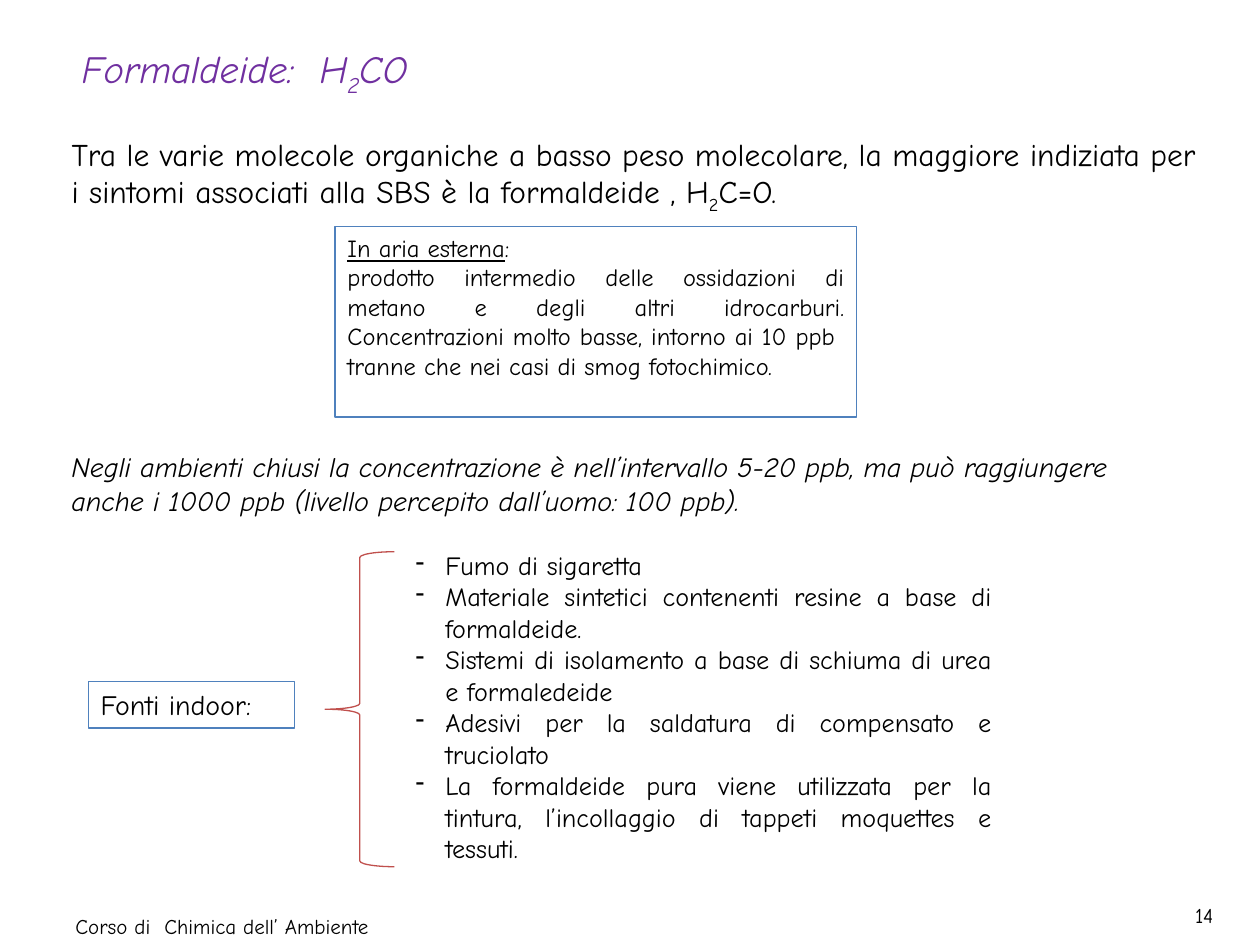
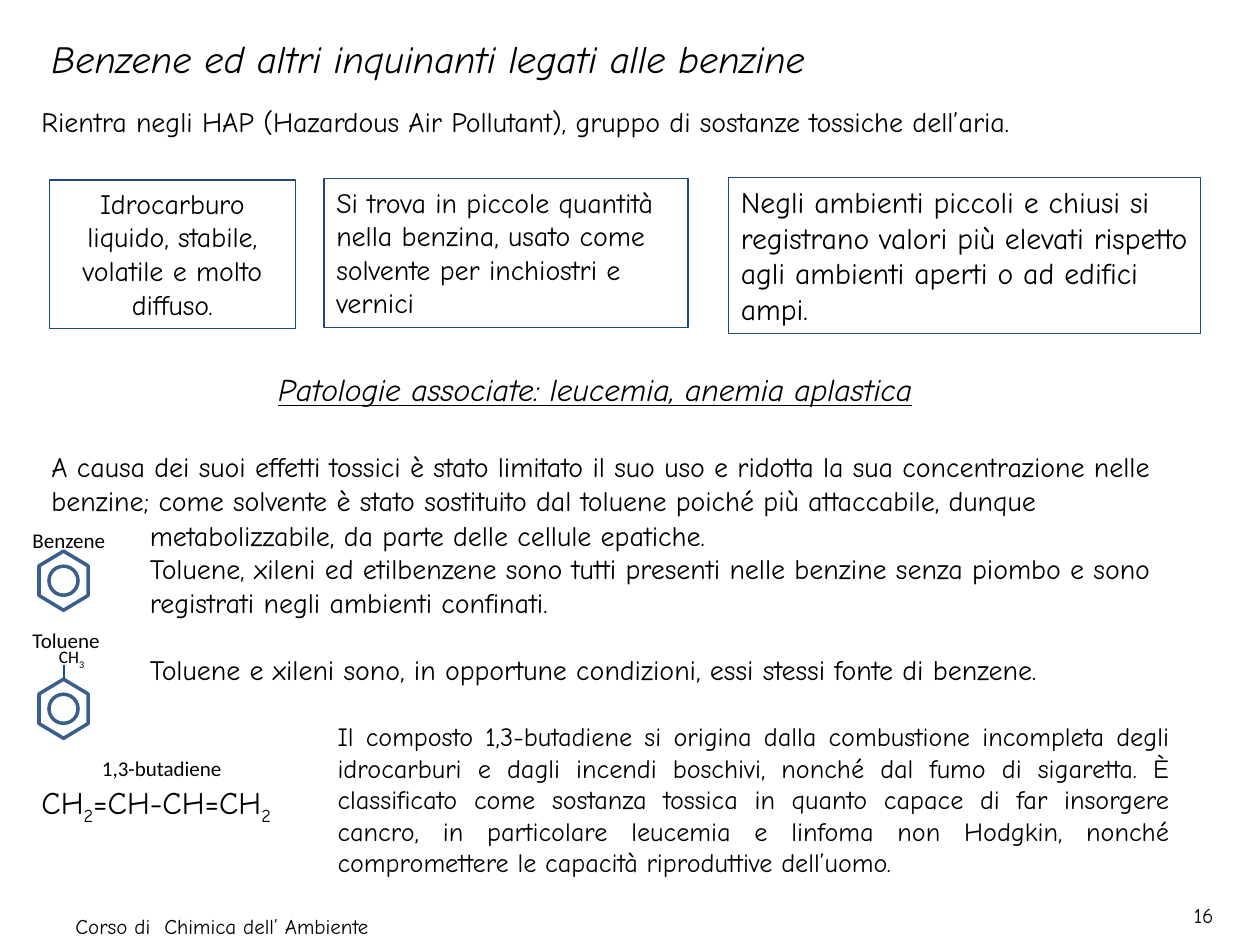
from dataclasses import dataclass

from lxml.etree import SubElement
from pptx import Presentation
from pptx.dml.color import RGBColor
from pptx.enum.shapes import MSO_CONNECTOR as Connector, MSO_SHAPE as Preset
from pptx.enum.text import PP_ALIGN as Align
from pptx.oxml.ns import qn
from pptx.util import Pt

BLACK = RGBColor(0x00, 0x00, 0x00)
PURPLE = RGBColor(0x70, 0x30, 0xA0)
BLUE = RGBColor(0x4F, 0x81, 0xBD)
NAVY = RGBColor(0x1F, 0x49, 0x7D)
RING_BLUE = RGBColor(0x3A, 0x5F, 0x8C)
RED = RGBColor(0xC0, 0x50, 0x4D)
BODY_FONT = "Comic Neue"
LABEL_FONT = "Calibri"
THIN = 0.75
INDENT = 17


@dataclass
class Box:
    left: float
    top: float
    width: float
    height: float

    def inner(self, left, top, width, height):
        return Box(self.left + left, self.top + top, width, height)

    def points(self):
        return Pt(self.left), Pt(self.top), Pt(self.width), Pt(self.height)


PAGE = Box(0, 0, 720, 540)


def add_spans(para, text):
    for index, piece in enumerate(text.split("_")):
        if piece:
            span = para.add_run()
            span.text = piece
            if index % 2:
                span.font._element.set("baseline", "-25000")


def add_text(page, box, texts, size, font=BODY_FONT, color=BLACK, italic=False,
             underline=False, align=Align.LEFT, border=None):
    shape = page.shapes.add_textbox(*box.points())
    if border is not None:
        shape.line.color.rgb = border
        shape.line.width = Pt(THIN)
    frame = shape.text_frame
    frame.word_wrap = True
    for index, text in enumerate([texts] if isinstance(texts, str) else texts):
        para = frame.add_paragraph() if index else frame.paragraphs[0]
        para.alignment = align
        para.font.name = font
        para.font.size = Pt(size)
        para.font.color.rgb = color
        para.font.italic = italic
        para.font.underline = underline
        add_spans(para, text)
    return frame.paragraphs


def add_outline(page, preset, box, color, width):
    shape = page.shapes.add_shape(preset, *box.points())
    shape.shadow.inherit = False
    shape.fill.background()
    shape.line.color.rgb = color
    shape.line.width = Pt(width)
    return shape


def add_dash(para):
    props = para._p.get_or_add_pPr()
    props.set("marL", str(Pt(INDENT)))
    props.set("indent", str(-Pt(INDENT)))
    dash = props.makeelement(qn("a:buChar"), {"char": "-"})
    props.insert(0, dash)


def add_title(page, box, text, color=BLACK):
    add_text(page, box, text, 22, color=color, italic=True)


def add_footer(page, box, number):
    add_text(page, box.inner(36, 518.4, 222, 24), "Corso di  Chimica dell’ Ambiente", 12)
    add_text(page, box.inner(660.2, 512, 40.3, 24), str(number), 12, align=Align.RIGHT)


def add_outdoor_air(page, box):
    heading, _ = add_text(page, box, [
        "In aria esterna",
        "prodotto intermedio delle ossidazioni di metano e degli altri idrocarburi. "
        "Concentrazioni molto basse, intorno ai 10 ppb  tranne che nei casi di smog "
        "fotochimico.",
    ], 14, align=Align.JUSTIFY, border=BLUE)
    heading.runs[0].font.underline = True
    add_spans(heading, ":")


def add_indoor_sources(page, box):
    add_text(page, box.inner(0, 79.2, 118.1, 26.6), "Fonti indoor:", 16, border=BLUE)
    add_outline(page, Preset.LEFT_BRACE, box.inner(135.4, 5, 39.6, 180), RED, THIN)
    sources = add_text(page, box.inner(180, 0, 343.4, 207.4), [
        "Fumo di sigaretta",
        "Materiale sintetici contenenti resine a base di formaldeide.",
        "Sistemi di isolamento a base di schiuma di urea e formaledeide",
        "Adesivi per la saldatura di compensato e truciolato",
        "La formaldeide pura viene utilizzata per la tintura, l’incollaggio di "
        "tappeti moquettes e tessuti.",
    ], 15, align=Align.JUSTIFY)
    for para in sources:
        add_dash(para)


def add_benzene_facts(page, box):
    add_text(page, box.inner(0, 1.4, 140.8, 85),
             "Idrocarburo liquido, stabile, volatile e molto diffuso.",
             16, align=Align.CENTER, border=NAVY)
    add_text(page, box.inner(157, 0.7, 208.1, 85),
             "Si trova in piccole quantità nella benzina, usato come solvente per "
             "inchiostri e vernici", 16, border=NAVY)
    add_text(page, box.inner(388.1, 0, 270, 89.3),
             "Negli ambienti piccoli e chiusi si registrano valori più elevati "
             "rispetto agli ambienti aperti o ad edifici ampi.", 17, border=NAVY)


def add_ring(page, box):
    hexagon = add_outline(page, Preset.HEXAGON, box, RING_BLUE, 2)
    hexagon.rotation = 90
    hexagon.adjustments[0] = 0.3
    size = 16.6
    circle = box.inner((box.width - size) / 2, (box.height - size) / 2, size, size)
    add_outline(page, Preset.OVAL, circle, RING_BLUE, 2)


def add_benzene(page, box):
    add_ring(page, box.inner(7.9, 19.7, 33.8, 28.1))
    add_text(page, box.inner(0, 0, 64, 21.6), "Benzene", 12, LABEL_FONT)


def add_toluene(page, box):
    add_ring(page, box.inner(7.9, 36, 33.8, 28.1))
    add_text(page, box.inner(15.1, 10.8, 50.4, 19.4), "CH_3_", 10, LABEL_FONT)
    x = Pt(box.left + 25.1)
    bond = page.shapes.add_connector(
        Connector.STRAIGHT, x, Pt(box.top + 25.2), x, Pt(box.top + 33.1))
    bond.line.color.rgb = NAVY
    bond.line.width = Pt(THIN)
    SubElement(bond._element.spPr, qn("a:effectLst"))
    add_text(page, box.inner(0, 0, 64, 21.6), "Toluene", 12, LABEL_FONT)


def add_butadiene(page, box):
    add_text(page, box.inner(0, 36, 157.7, 28.8), "CH_2_=CH-CH=CH_2_", 18)
    add_text(page, box.inner(34.6, 20.2, 89.3, 21.6), "1,3-butadiene", 12, LABEL_FONT)
    add_text(page, box.inner(169.2, 0, 489.6, 98),
             "Il composto 1,3-butadiene si origina dalla combustione incompleta degli "
             "idrocarburi e dagli incendi boschivi, nonché dal fumo di sigaretta. È "
             "classificato come sostanza tossica in quanto capace di far insorgere "
             "cancro, in particolare leucemia e linfoma non Hodgkin, nonché "
             "compromettere le capacità riproduttive dell’uomo.",
             15, align=Align.JUSTIFY)


def add_replacement(page, box):
    add_text(page, box.inner(0, 0, 680.4, 46.1),
             "A causa dei suoi effetti tossici è stato limitato il suo uso e ridotta "
             "la sua concentrazione nelle benzine; come solvente è stato sostituito dal "
             "toluene poiché più attaccabile, dunque", 16)
    paras = add_text(page, box.inner(56.2, 39.2, 613.4, 104.4), [
        "metabolizzabile, da parte delle cellule epatiche.",
        "Toluene, xileni ed etilbenzene sono tutti presenti nelle benzine senza "
        "piombo e sono registrati negli ambienti confinati.",
        "Toluene e xileni sono, in opportune condizioni, essi stessi fonte di benzene.",
    ], 16)
    paras[-1].space_before = Pt(19)


def formaldehyde_slide(page, box):
    add_title(page, box.inner(39.6, 22.3, 630, 33.8), "Formaldeide:  H_2_CO", PURPLE)
    add_text(page, box.inner(33.8, 73.4, 663.8, 51.1),
             "Tra le varie molecole organiche a basso peso molecolare, la maggiore "
             "indiziata per i sintomi associati alla SBS è la formaldeide , H_2_C=O.", 18)
    add_outdoor_air(page, box.inner(191.5, 129.6, 298.1, 108.7))
    add_text(page, box.inner(33.8, 253.4, 652.3, 46.1),
             "Negli ambienti chiusi la concentrazione è nell’intervallo 5-20 ppb, ma può "
             "raggiungere anche i 1000 ppb (livello percepito dall’uomo: 100 ppb).",
             16, italic=True)
    add_indoor_sources(page, box.inner(50.4, 310.3, 524, 207.4))
    add_footer(page, box, 14)


def benzene_slide(page, box):
    add_title(page, box.inner(22.3, 16.6, 573.8, 33.8),
              "Benzene ed altri inquinanti legati alle benzine")
    add_text(page, box.inner(16.6, 56.2, 686.2, 26.6),
             "Rientra negli HAP (Hazardous Air Pollutant), gruppo di sostanze tossiche "
             "dell’aria.", 16)
    add_benzene_facts(page, box.inner(28.1, 101.5, 658, 89.3))
    add_text(page, box.inner(151.9, 208.1, 438.5, 28.8),
             "Patologie associate: leucemia, anemia aplastica", 18,
             italic=True, underline=True)
    add_replacement(page, box.inner(22.3, 253.4, 680.4, 144))
    add_benzene(page, box.inner(11.5, 298.1, 64, 50))
    add_toluene(page, box.inner(11.5, 355, 66, 66))
    add_butadiene(page, box.inner(16.6, 408.2, 659, 98))
    add_footer(page, box, 16)


def main():
    deck = Presentation()
    deck.slide_width, deck.slide_height = Pt(PAGE.width), Pt(PAGE.height)
    for build in (formaldehyde_slide, benzene_slide):
        build(deck.slides.add_slide(deck.slide_layouts[6]), PAGE)
    deck.save("out.pptx")


if __name__ == "__main__":
    main()
